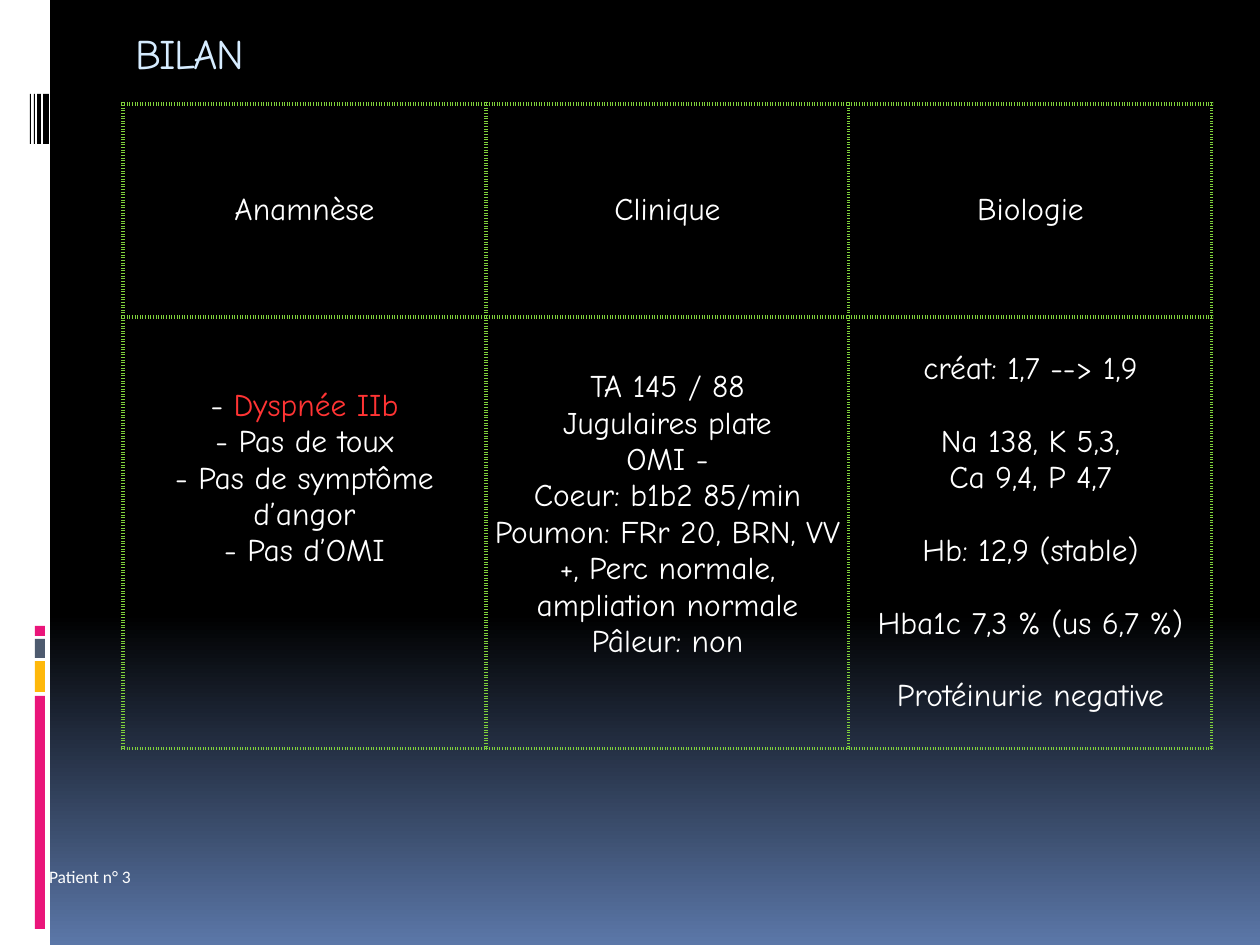
from copy import deepcopy

from lxml import etree
from pptx import Presentation
from pptx import util as u
from pptx.dml.color import RGBColor
from pptx.enum import shapes, text
from pptx.oxml.ns import qn

# Content
TITLE = "BILAN"
PATIENT = "Patient n° 3"
HEADINGS = ["Anamnèse", "Clinique", "Biologie"]
ALERT = "Dyspnée IIb"
# Each column is a list of groups; groups are set one line apart
FINDINGS = [
    [["- " + ALERT, "- Pas de toux", "- Pas de symptôme d’angor", "- Pas d’OMI"]],
    [["TA 145 / 88", "Jugulaires plate", "OMI -", "Coeur: b1b2 85/min",
      "Poumon: FRr 20, BRN, VV +, Perc normale, ampliation normale",
      "Pâleur: non"]],
    [["créat: 1,7 --> 1,9"], ["Na 138, K 5,3,", "Ca 9,4, P 4,7"],
     ["Hb: 12,9 (stable)"], ["Hba1c 7,3 % (us 6,7 %)"],
     ["Protéinurie negative"]],
]
LIFT_LINES = [3, 1, 0]  # free lines kept under each column

COLORS = {"white": "FFFFFF", "black": "000000", "pink": "EA157A",
          "amber": "FEB80A", "slate": "4E5B6F", "blue": "5B77A8",
          "title": "D6ECFF", "alert": "FF3434", "grid": "7FD13B"}
HAND, PLAIN = "Comic Neue", "Calibri"

# Geometry in px (126 to the inch)
WIDTH, HEIGHT = 1260, 945
LINE_PX, LINE_PT = 36, 20.75
INSET = 5
TABLE_LEFT, TABLE_TOP, COLUMN_WIDTH = 123, 104, 363
ROW_HEIGHTS = [213, 432]
BARS = [  # left, top, width, height, colour
    (0, 0, 50, HEIGHT, "white"),
    (35, 696, 10, 233, "pink"),
    (35, 661, 10, 31, "amber"),
    (35, 639, 10, 19, "slate"),
    (35, 626, 10, 10, "pink"),
] + [(left, 94, width, 50, "black")
     for left, width in [(43, 6), (37, 4), (34, 1), (30, 1)]]


def px(n):
    return u.Emu(round(n * 914400 / 126))


def rgb(name):
    return RGBColor.from_string(COLORS[name])


def write(paragraph, words, size=18, font=HAND, color="white",
          align=text.PP_ALIGN.LEFT, before=0):
    paragraph.alignment = align
    paragraph.space_before = u.Pt(before)
    run = paragraph.add_run()
    run.text = words
    run.font.size = u.Pt(size)
    run.font.name = font
    run.font.color.rgb = rgb(color)
    return run


def set_insets(box, left, top, right, bottom):
    box.margin_left, box.margin_top = px(left), px(top)
    box.margin_right, box.margin_bottom = px(right), px(bottom)


def draw_borders(cell):
    props = cell._tc.get_or_add_tcPr()
    for i, side in enumerate(["lnL", "lnR", "lnT", "lnB"]):
        line = etree.Element(qn("a:" + side), w=str(u.Pt(2)))
        fill = etree.SubElement(line, qn("a:solidFill"))
        etree.SubElement(fill, qn("a:srgbClr"), val=COLORS["grid"])
        etree.SubElement(line, qn("a:prstDash"), val="sysDot")
        props.insert(i, line)


def paint_background(slide):
    fill = slide.background.fill
    fill.gradient()
    fill.gradient_angle = 270
    first = slide._element.find(".//" + qn("a:gs"))
    first.addnext(deepcopy(first))
    stops = [(0, "black"), (0.65, "black"), (1, "blue")]
    for stop, (position, color) in zip(fill.gradient_stops, stops):
        stop.position = position
        stop.color.rgb = rgb(color)


def add_bars(slide):
    for left, top, width, height, color in BARS:
        bar = slide.shapes.add_shape(shapes.MSO_SHAPE.RECTANGLE,
                                     px(left), px(top), px(width), px(height))
        bar.shadow.inherit = False
        bar.fill.solid()
        bar.fill.fore_color.rgb = rgb(color)
        bar.line.fill.background()


def add_title(slide):
    title = slide.shapes.title
    title.left, title.top, title.width, title.height = map(px, (123, 20, 1014, 65))
    title.text_frame.vertical_anchor = text.MSO_ANCHOR.MIDDLE
    run = write(title.text_frame.paragraphs[0], TITLE, size=24, color="title")
    run.font._element.set("spc", "-100")


def fill_cell(cell, groups, lift=0):
    cell.fill.background()
    cell.vertical_anchor = text.MSO_ANCHOR.MIDDLE
    set_insets(cell, INSET, INSET, INSET, INSET + lift * LINE_PX)
    draw_borders(cell)
    paragraph = None
    for group in groups:
        for i, line in enumerate(group):
            gap = LINE_PT if paragraph is not None and i == 0 else 0
            frame = cell.text_frame
            paragraph = frame.paragraphs[0] if paragraph is None else frame.add_paragraph()
            lead, alert, rest = line.partition(ALERT)
            for words, color in [(lead, "white"), (alert, "alert"), (rest, "white")]:
                if words:
                    write(paragraph, words, color=color, before=gap,
                          align=text.PP_ALIGN.CENTER)


def add_findings(slide):
    table = slide.shapes.add_table(
        2, len(HEADINGS), px(TABLE_LEFT), px(TABLE_TOP),
        px(COLUMN_WIDTH * len(HEADINGS)), px(sum(ROW_HEIGHTS))).table
    table.first_row = table.horz_banding = False
    for row, height in zip(table.rows, ROW_HEIGHTS):
        row.height = px(height)
    for i, heading in enumerate(HEADINGS):
        table.columns[i].width = px(COLUMN_WIDTH)
        fill_cell(table.cell(0, i), [[heading]])
        fill_cell(table.cell(1, i), FINDINGS[i], LIFT_LINES[i])


def add_patient(slide):
    frame = slide.shapes.add_textbox(px(49), px(862), px(142), px(29)).text_frame
    frame.word_wrap = True
    frame.vertical_anchor = text.MSO_ANCHOR.MIDDLE
    set_insets(frame, 0, 0, 0, 0)
    write(frame.paragraphs[0], PATIENT, size=10, font=PLAIN)


def main():
    deck = Presentation()
    deck.slide_width, deck.slide_height = px(WIDTH), px(HEIGHT)
    slide = deck.slides.add_slide(deck.slide_layouts[5])
    paint_background(slide)
    add_bars(slide)
    add_title(slide)
    add_findings(slide)
    add_patient(slide)
    deck.save("out.pptx")


if __name__ == "__main__":
    main()
